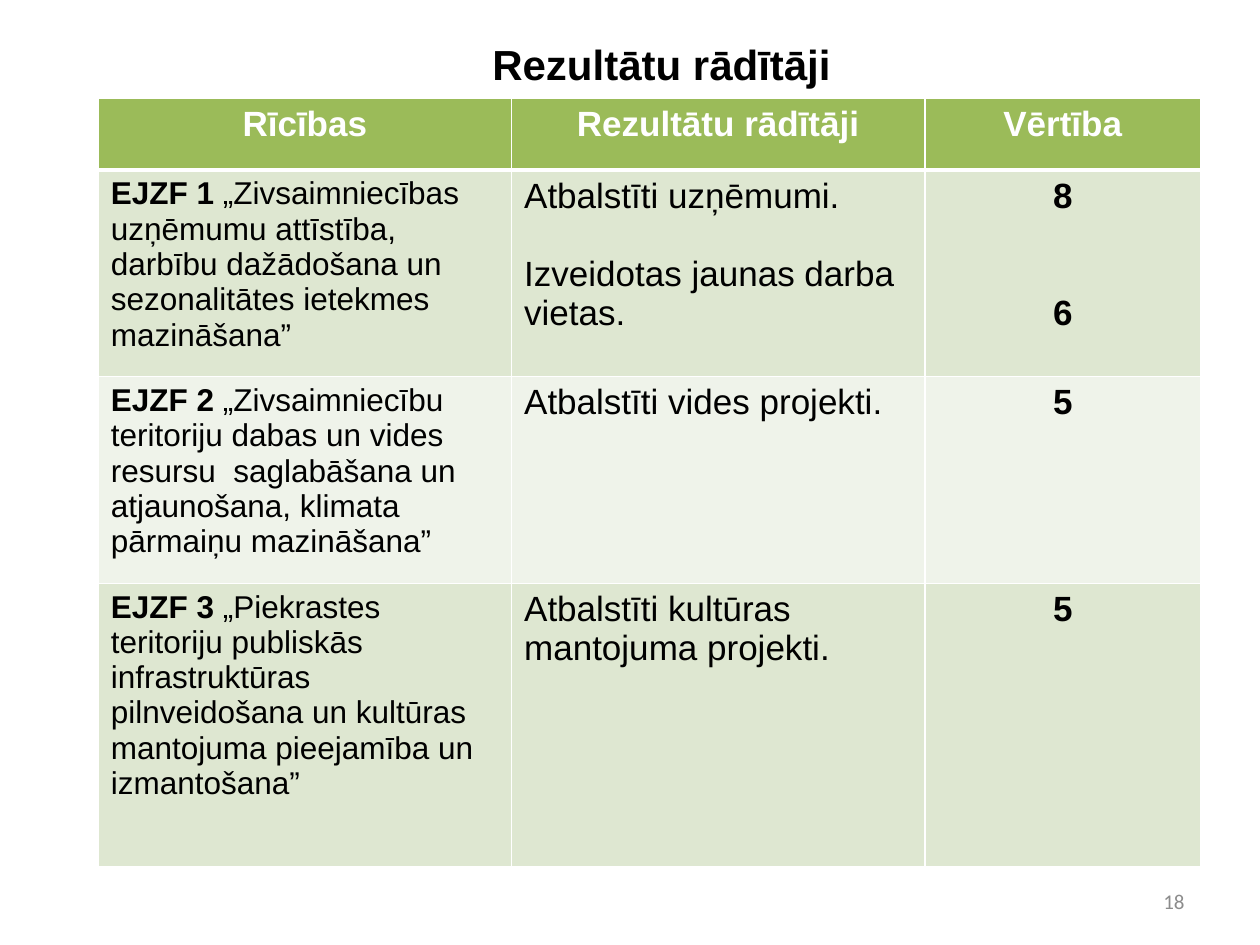
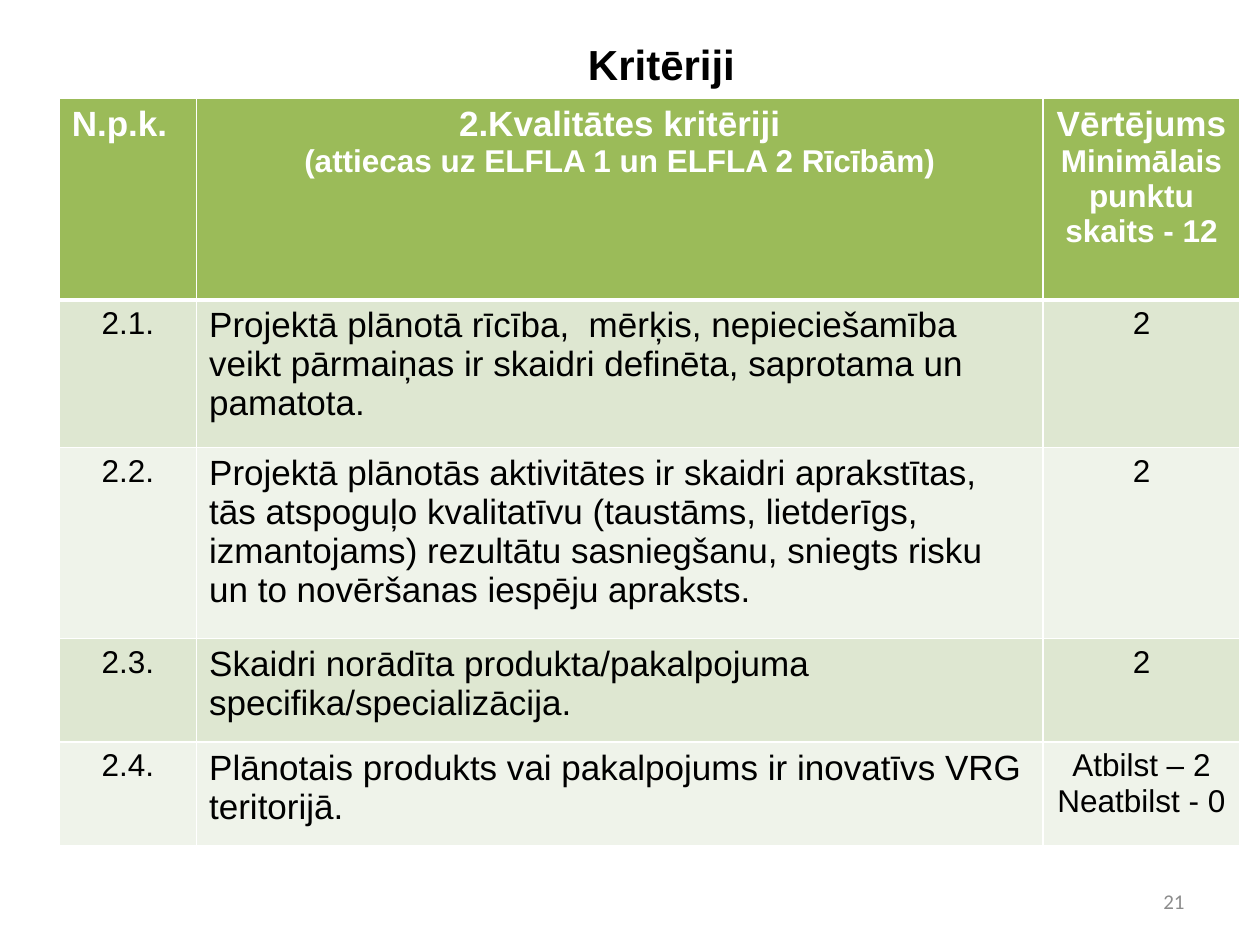
from collections import namedtuple
from lxml.etree import SubElement
from pptx import Presentation
from pptx.dml.color import RGBColor
from pptx.enum.text import MSO_ANCHOR as Anchor, PP_ALIGN as Align
from pptx.oxml.ns import qn
from pptx.util import Inches, Pt

COLOURS = {
    "header": "9BBB59",
    "odd_row": "DEE7D1",
    "even_row": "EFF3EA",
    "white": "FFFFFF",
    "text": "000000",
    "number": "8C8C8C",
}
TITLE_BOX = (1, 0.23, 8.5, 0.55)
NUMBER_BOX = (7.17, 6.95, 2.33, 0.4)
BORDER_SIDES = ("L", "R", "T", "B")

TITLE = {"size": 24, "bold": True, "align": Align.CENTER}
NUMBER = {"size": 12, "name": "Calibri", "colour": "number", "align": Align.RIGHT}
HEADER = {"size": 20, "bold": True, "colour": "white", "align": Align.CENTER}
ACTION = {"size": 18}
BODY = {"size": 20}
VALUE = {"size": 20, "bold": True, "align": Align.CENTER}
SCORE = {"size": 18, "align": Align.CENTER}

Line = namedtuple("Line", "text lead style", defaults=("", {}))


def rgb(name):
    return RGBColor.from_string(COLOURS[name])


def add_span(para, text, style):
    span = para.add_run()
    span.text = text
    font = {
        "name": style.get("name", "Arial"),
        "size": Pt(style["size"]),
        "bold": style.get("bold", False),
    }
    for key, value in font.items():
        setattr(span.font, key, value)
    span.font.color.rgb = rgb(style.get("colour", "text"))


def write_lines(frame, lines, base):
    for index, line in enumerate(lines):
        if isinstance(line, str):
            line = Line(line)
        style = {**base, **line.style}
        para = frame.add_paragraph() if index else frame.paragraphs[0]
        para.alignment = style.get("align", Align.LEFT)
        para.space_before = Pt(style.get("gap", 0))
        if line.lead:
            add_span(para, line.lead, {**style, "bold": True})
        add_span(para, line.text, style)


def add_label(page, box, text, style):
    frame = page.shapes.add_textbox(*map(Inches, box)).text_frame
    frame.word_wrap = True
    frame.vertical_anchor = Anchor.MIDDLE
    write_lines(frame, [text], style)


def set_borders(cell, widths):
    properties = cell._tc.get_or_add_tcPr()
    for position, side in enumerate(BORDER_SIDES):
        line = SubElement(properties, qn(f"a:ln{side}"), w=str(Pt(widths.get(side, 1))))
        fill = SubElement(line, qn("a:solidFill"))
        SubElement(fill, qn("a:srgbClr"), val=COLOURS["white"])
        properties.remove(line)
        properties.insert(position, line)


def fill_cell(cell, lines, style, colour, borders):
    cell.fill.solid()
    cell.fill.fore_color.rgb = rgb(colour)
    set_borders(cell, borders)
    write_lines(cell.text_frame, lines, style)


def add_grid(page, left, top, widths, heights, styles, rows):
    box = map(Inches, (left, top, sum(widths), sum(heights)))
    table = page.shapes.add_table(len(heights), len(widths), *box).table
    for column, width in zip(table.columns, widths):
        column.width = Inches(width)
    for row, height in zip(table.rows, heights):
        row.height = Inches(height)
    for row_index, row in enumerate(rows):
        colour = "odd_row" if row_index % 2 else "even_row"
        borders = {"T": 3} if row_index == 1 else {}
        if row_index == 0:
            colour, borders = "header", {"B": 3}
        for column_index, lines in enumerate(row):
            style = styles[column_index] if row_index else HEADER
            fill_cell(table.cell(row_index, column_index), lines, style, colour, borders)


def add_table_page(deck, title, number, **grid):
    page = deck.slides.add_slide(deck.slide_layouts[6])
    add_label(page, TITLE_BOX, title, TITLE)
    add_grid(page, top=TITLE_BOX[1] + TITLE_BOX[3], **grid)
    add_label(page, NUMBER_BOX, number, NUMBER)


def add_results_page(deck):
    rows = [
        [["Rīcības"], ["Rezultātu rādītāji"], ["Vērtība"]],
        [
            [Line("„Zivsaimniecības uzņēmumu attīstība, darbību dažādošana un "
                  "sezonalitātes ietekmes mazināšana”", "EJZF 1 ")],
            ["Atbalstīti uzņēmumi.",
             Line("Izveidotas jaunas darba vietas.", style={"gap": 22.4})],
            ["8", Line("6", style={"gap": 44.8})],
        ],
        [
            [Line(" „Zivsaimniecību teritoriju dabas un vides resursu  saglabāšana un "
                  "atjaunošana, klimata pārmaiņu mazināšana”", "EJZF 2")],
            ["Atbalstīti vides projekti."],
            ["5"],
        ],
        [
            [Line(" „Piekrastes teritoriju publiskās infrastruktūras "
                  "pilnveidošana un kultūras", "EJZF 3"),
             "mantojuma pieejamība un izmantošana”"],
            ["Atbalstīti kultūras mantojuma projekti."],
            ["5"],
        ],
    ]
    add_table_page(deck, "Rezultātu rādītāji", "18", left=0.78,
                   widths=(3.28, 3.28, 2.19), heights=(0.57, 1.64, 1.64, 2.25),
                   styles=(ACTION, BODY, VALUE), rows=rows)


def add_criteria_page(deck):
    small = {"size": 18}
    criteria = [
        ("Projektā plānotā rīcība,  mērķis, nepieciešamība veikt pārmaiņas ir skaidri "
         "definēta, saprotama un pamatota.", ["2"]),
        ("Projektā plānotās aktivitātes ir skaidri aprakstītas, tās atspoguļo kvalitatīvu "
         "(taustāms, lietderīgs, izmantojams) rezultātu sasniegšanu, sniegts risku un to "
         "novēršanas iespēju apraksts.", ["2"]),
        ("Skaidri norādīta produkta/pakalpojuma specifika/specializācija.", ["2"]),
        ("Plānotais produkts vai pakalpojums ir inovatīvs VRG teritorijā.",
         ["Atbilst – 2", "Neatbilst - 0"]),
    ]
    header = [
        [Line("N.p.k.", style={"align": Align.LEFT})],
        ["2.Kvalitātes kritēriji",
         Line("(attiecas uz ELFLA 1 un ELFLA 2 Rīcībām)", style=small)],
        ["Vērtējums", Line("Minimālais punktu skaits - 12", style=small)],
    ]
    rows = [header] + [[[f"2.{order}."], [text], score]
                       for order, (text, score) in enumerate(criteria, 1)]
    add_table_page(deck, "Kritēriji", "21", left=0.47,
                   widths=(1.09, 6.72, 1.56), heights=(1.6, 1.17, 1.52, 0.82, 0.82),
                   styles=(SCORE, BODY, SCORE), rows=rows)


def main():
    deck = Presentation()
    deck.slide_width = Inches(10)
    deck.slide_height = Inches(7.5)
    add_results_page(deck)
    add_criteria_page(deck)
    deck.save("out.pptx")


if __name__ == "__main__":
    main()
